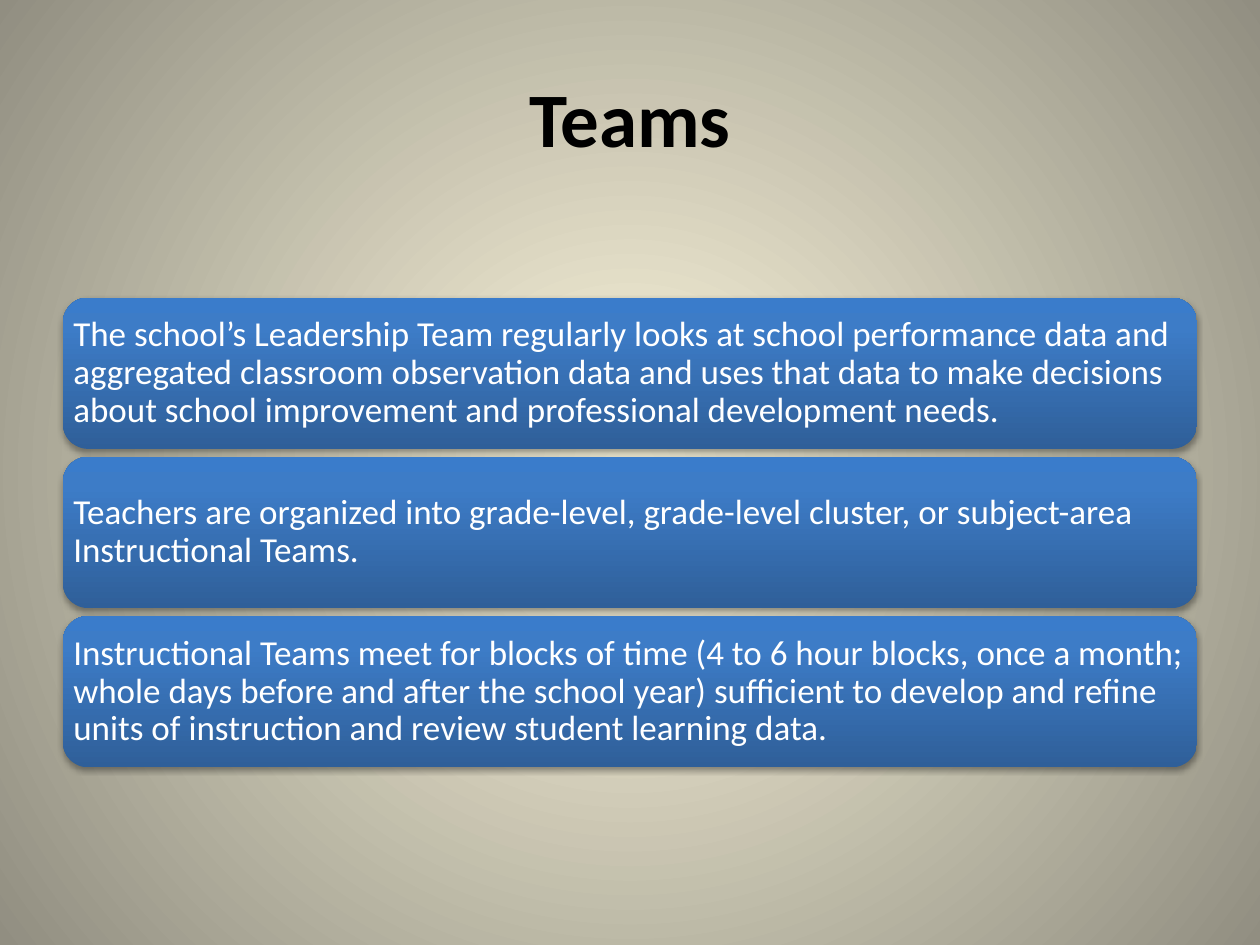
from pptx import Presentation
from pptx.dml.color import RGBColor
from pptx.enum.shapes import MSO_SHAPE
from pptx.enum.text import MSO_ANCHOR, PP_ALIGN
from pptx.oxml.ns import qn
from pptx.util import Cm, Pt
from lxml.etree import SubElement

BLACK = RGBColor(0x00, 0x00, 0x00)
WHITE = RGBColor(0xFF, 0xFF, 0xFF)
CREAM = RGBColor(0xFC, 0xF7, 0xDD)
STONE = RGBColor(0x91, 0x8E, 0x81)
DEEP_BLUE = RGBColor(0x2F, 0x5F, 0x99)
MID_BLUE = RGBColor(0x3D, 0x7C, 0xC7)
BRIGHT_BLUE = RGBColor(0x3A, 0x7C, 0xCB)

LEFT = 1.27
WIDTH = 22.86
CARD_TOP = 6
CARD_HEIGHT = 3.05
CARD_GAP = 0.16

STATEMENTS = [
    "The school’s Leadership Team regularly looks at school performance data and "
    "aggregated classroom observation data and uses that data to make decisions "
    "about school improvement and professional development needs.",
    "Teachers are organized into grade-level, grade-level cluster, or subject-area "
    "Instructional Teams.",
    "Instructional Teams meet for blocks of time (4 to 6 hour blocks, once a month; "
    "whole days before and after the school year) sufficient to develop and refine "
    "units of instruction and review student learning data.",
]


def add_colour(parent, colour):
    return SubElement(parent, qn("a:srgbClr"), val=str(colour))


def set_stops(gradient, stops):
    for child in list(gradient):
        gradient.remove(child)
    stop_list = SubElement(gradient, qn("a:gsLst"))
    for percent, colour in stops:
        add_colour(SubElement(stop_list, qn("a:gs"), pos=str(percent * 1000)), colour)


class TeamsSlide:
    font = "Calibri"

    def __init__(self, deck):
        self.page = deck.slides.add_slide(deck.slide_layouts[6])

    def background(self):
        self.page.background.fill.gradient()
        gradient = next(self.page.element.iter(qn("a:gradFill")))
        set_stops(gradient, [(0, CREAM), (100, STONE)])
        circle = SubElement(gradient, qn("a:path"), path="circle")
        SubElement(circle, qn("a:fillToRect"), l="50000", t="50000", r="50000", b="50000")

    def fill_text(self, box, text, size, colour, align, bold=False):
        frame = box.text_frame
        frame.text = text
        frame.word_wrap = True
        frame.vertical_anchor = MSO_ANCHOR.MIDDLE
        para = frame.paragraphs[0]
        para.alignment = align
        span = para.runs[0]
        span.font.name = self.font
        span.font.size = Pt(size)
        span.font.bold = bold
        span.font.color.rgb = colour
        return para

    def title(self, text):
        box = self.page.shapes.add_textbox(Cm(LEFT), Cm(0.76), Cm(WIDTH), Cm(3.18))
        self.fill_text(box, text, 44, BLACK, PP_ALIGN.CENTER, bold=True)

    def card(self, top, text):
        box = self.page.shapes.add_shape(
            MSO_SHAPE.ROUNDED_RECTANGLE, Cm(LEFT), Cm(top), Cm(WIDTH), Cm(CARD_HEIGHT)
        )
        box.line.fill.background()
        box.fill.gradient()
        gradient = next(box.element.spPr.iter(qn("a:gradFill")))
        set_stops(gradient, [(0, DEEP_BLUE), (80, MID_BLUE), (100, BRIGHT_BLUE)])
        SubElement(gradient, qn("a:lin"), ang="16200000", scaled="0")
        self.drop_shadow(box)
        frame = box.text_frame
        frame.margin_left = frame.margin_right = Cm(0.06)
        frame.margin_top = frame.margin_bottom = Cm(0.06)
        para = self.fill_text(box, text, 20, WHITE, PP_ALIGN.LEFT)
        para.line_spacing = 0.9

    def drop_shadow(self, box):
        box.shadow.inherit = False
        effects = box.element.spPr.find(qn("a:effectLst"))
        shadow = SubElement(
            effects, qn("a:outerShdw"), blurRad=str(Pt(3.1)), dist=str(Pt(1.8)),
            dir="5400000", rotWithShape="0",
        )
        SubElement(add_colour(shadow, BLACK), qn("a:alpha"), val="35000")


def main():
    deck = Presentation()
    deck.slide_width = Cm(25.4)
    deck.slide_height = Cm(19.05)
    slide = TeamsSlide(deck)
    slide.background()
    slide.title("Teams")
    for index, statement in enumerate(STATEMENTS):
        slide.card(CARD_TOP + index * (CARD_HEIGHT + CARD_GAP), statement)
    deck.save("out.pptx")


if __name__ == "__main__":
    main()
